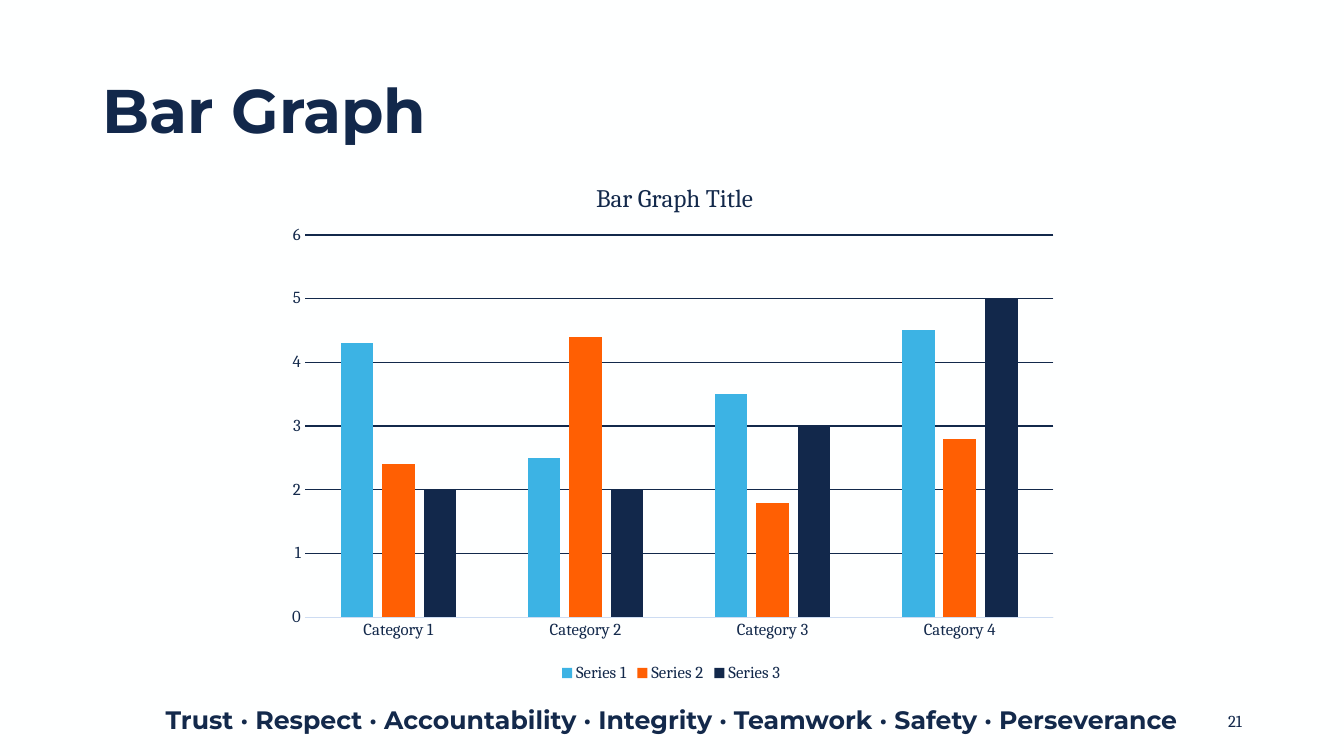
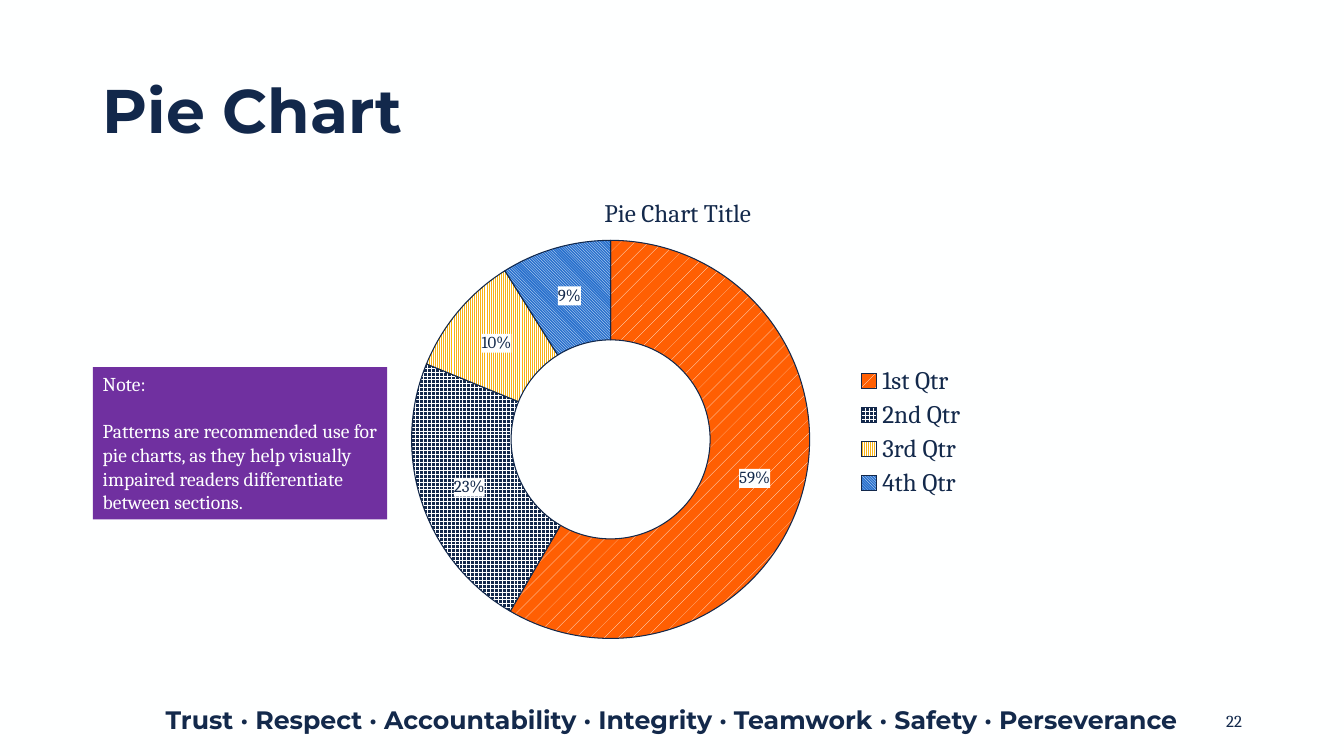
from dataclasses import dataclass
from typing import Any

from lxml.etree import SubElement
from pptx import Presentation
from pptx.chart.data import CategoryChartData as Data
from pptx.dml.color import RGBColor as Rgb
from pptx.enum.chart import XL_CHART_TYPE as Kind, XL_LEGEND_POSITION as Side, XL_TICK_MARK as Tick
from pptx.enum.dml import MSO_PATTERN as Pat
from pptx.enum.shapes import MSO_SHAPE as Shape
from pptx.enum.text import MSO_ANCHOR as Anchor, MSO_AUTO_SIZE as Auto, PP_ALIGN as Align
from pptx.oxml import parse_xml
from pptx.oxml.ns import nsdecls, qn
from pptx.util import Cm, Pt

NAVY = Rgb(0x12, 0x28, 0x4B)
INK = Rgb(0x13, 0x29, 0x4B)
WHITE = Rgb(0xFE, 0xFF, 0xFF)
SKY = Rgb(0x3C, 0xB3, 0xE4)
ORANGE = Rgb(0xFF, 0x5F, 0x03)
GOLD = Rgb(0xF8, 0xB3, 0x16)
BLUE = Rgb(0x28, 0x70, 0xCD)
PURPLE = Rgb(0x70, 0x30, 0xA0)
PALE = Rgb(0xCD, 0xDC, 0xF2)

HEAD = {"name": "Montserrat", "size": Pt(44), "bold": True}
MOTTO = {"name": "Montserrat", "size": Pt(18), "bold": True}
LARGE = {"name": "Cambria", "size": Pt(18), "bold": False}
NOTE = {"name": "Cambria", "size": Pt(14)}
SMALL = {"name": "Cambria", "size": Pt(12)}
BASE = {"name": "Cambria", "size": Pt(10)}
WORDS = "Trust · Respect · Accountability · Integrity · Teamwork · Safety · Perseverance"


@dataclass(frozen=True)
class Box:
    """Place and size in centimetres."""
    left: float
    top: float
    width: float
    height: float

    def cm(self) -> tuple[Cm, ...]:
        """Give the four lengths."""
        return Cm(self.left), Cm(self.top), Cm(self.width), Cm(self.height)


@dataclass(frozen=True)
class Row:
    """One chart series."""
    name: str
    vals: tuple[float, ...]
    tint: Rgb | None = None


@dataclass(frozen=True)
class Slice:
    """One patterned ring part."""
    name: str
    val: int
    weave: Any
    tint: Rgb


@dataclass(frozen=True)
class Plan:
    """Chart frame, heading and inner layout in fractions."""
    kind: Any
    box: Box
    title: str
    head: dict[str, float]
    plot: dict[str, float]
    side: Any
    key: dict[str, Any]


TITLE = Box(2.33, 1.02, 29.21, 3.68)
FOOT = Box(3.73, 17.63, 26.39, 1.02)
PAGE = Box(23.93, 17.65, 7.62, 1.02)
ASIDE = Box(2.34, 9.25, 7.42, 3.84)

ROWS = (
    Row("Series 1", (4.3, 2.5, 3.5, 4.5), SKY),
    Row("Series 2", (2.4, 4.4, 1.8, 2.8), ORANGE),
    Row("Series 3", (2, 2, 3, 5), NAVY),
)
SLICES = (
    Slice("1st Qtr", 59, Pat.PERCENT_5, ORANGE),
    Slice("2nd Qtr", 23, Pat.LARGE_GRID, NAVY),
    Slice("3rd Qtr", 10, Pat.LIGHT_VERTICAL, GOLD),
    Slice("4th Qtr", 9, Pat.LIGHT_DOWNWARD_DIAGONAL, BLUE),
)
BARS = Plan(Kind.COLUMN_CLUSTERED, Box(6.88, 3.91, 20.07, 13.39), "Bar Graph Title",
            {"x": 0.4, "y": 0.04}, {"x": 0.04, "y": 0.15, "w": 0.94, "h": 0.72},
            Side.BOTTOM, SMALL)
RING = Plan(Kind.DOUGHNUT, Box(7.82, 4.22, 18.24, 12.24), "Pie Chart Title",
            {"x": 0.4, "y": 0.05}, {"x": 0.14, "y": 0.15, "w": 0.55, "h": 0.82},
            Side.RIGHT, LARGE)
KEY = {"x": 0.75, "y": 0.4, "w": 0.16, "h": 0.29}


def style(item: Any, form: dict[str, Any]) -> None:
    """Set each attribute in a format."""
    for name, val in form.items():
        setattr(item, name, val)


def ink(font: Any, form: dict[str, Any], tint: Rgb = INK) -> None:
    """Format and colour a font."""
    style(font, form)
    font.color.rgb = tint


def place(part: Any, spots: dict[str, float], after: str = "") -> None:
    """Give a chart part a manual layout."""
    for old in part.findall(qn("c:layout")):
        part.remove(old)
    lay = parse_xml(f"<c:layout {nsdecls('c')}><c:manualLayout/></c:layout>")
    hand = lay[0]
    if not after:
        SubElement(hand, qn("c:layoutTarget")).set("val", "inner")
    for name in ("x", "y"):
        SubElement(hand, qn(f"c:{name}Mode")).set("val", "edge")
    for name, val in spots.items():
        SubElement(hand, qn(f"c:{name}")).set("val", str(val))
    if after:
        part.find(qn(after)).addnext(lay)
    else:
        part.insert(0, lay)


def label(slide: Any, box: Box, text: str, form: dict[str, Any], tint: Rgb,
          align: Any, anchor: Any) -> None:
    """Add one line of text."""
    frame = slide.shapes.add_textbox(*box.cm()).text_frame
    style(frame, {"word_wrap": True, "vertical_anchor": anchor, "text": text})
    line = frame.paragraphs[0]
    line.alignment = align
    ink(line.runs[0].font, form, tint)


def start(deck: Any, text: str, page: int) -> Any:
    """Add a slide with title, motto and page number."""
    slide = deck.slides.add_slide(deck.slide_layouts[5])
    title = slide.shapes.title
    spots = dict(zip(("left", "top", "width", "height"), TITLE.cm()))
    style(title, spots)
    style(title.text_frame, {"text": text, "word_wrap": True, "auto_size": Auto.NONE,
                             "vertical_anchor": Anchor.MIDDLE})
    line = title.text_frame.paragraphs[0]
    style(line, {"alignment": Align.LEFT, "line_spacing": 0.9})
    ink(line.runs[0].font, HEAD, NAVY)
    label(slide, PAGE, str(page), SMALL, NAVY, Align.RIGHT, Anchor.MIDDLE)
    label(slide, FOOT, WORDS, MOTTO, INK, Align.CENTER, Anchor.TOP)
    return slide


def graph(slide: Any, plan: Plan, cats: list[str], rows: tuple[Row, ...]) -> Any:
    """Add a chart with heading and legend."""
    data = Data()
    data.categories = cats
    for row in rows:
        data.add_series(row.name, row.vals)
    chart = slide.shapes.add_chart(plan.kind, *plan.box.cm(), data).chart
    ink(chart.font, BASE)
    style(chart, {"has_title": True, "has_legend": True})
    frame = chart.chart_title.text_frame
    frame.text = plan.title
    ink(frame.paragraphs[0].runs[0].font, LARGE)
    place(chart.element.find(".//" + qn("c:title")), plan.head, "c:tx")
    place(chart.element.find(".//" + qn("c:plotArea")), plan.plot)
    style(chart.legend, {"position": plan.side, "include_in_layout": False})
    ink(chart.legend.font, plan.key)
    return chart


def bars(deck: Any) -> None:
    """Build the column slide."""
    slide = start(deck, "Bar Graph", 21)
    chart = graph(slide, BARS, [f"Category {num}" for num in range(1, 5)], ROWS)
    plot = chart.plots[0]
    style(plot, {"gap_width": 219, "overlap": -27, "vary_by_categories": False})
    for bar, row in zip(plot.series, ROWS):
        bar.format.fill.solid()
        bar.format.fill.fore_color.rgb = row.tint
    for axis in (chart.category_axis, chart.value_axis):
        style(axis, {"major_tick_mark": Tick.NONE, "minor_tick_mark": Tick.NONE})
        ink(axis.tick_labels.font, SMALL)
    base = chart.category_axis.format.line
    base.color.rgb = PALE
    base.width = Pt(0.75)
    scale = chart.value_axis
    style(scale, {"minimum_scale": 0, "maximum_scale": 6, "major_unit": 1,
                  "has_major_gridlines": True})
    scale.format.line.fill.background()
    grid = scale.major_gridlines.format.line
    grid.color.rgb = INK
    grid.width = Pt(1)


def ring(deck: Any) -> None:
    """Build the doughnut slide."""
    slide = start(deck, "Pie Chart", 22)
    row = Row("Series 1", tuple(part.val for part in SLICES))
    chart = graph(slide, RING, [part.name for part in SLICES], (row,))
    place(chart.element.find(".//" + qn("c:legend")), KEY, "c:legendPos")
    plot = chart.plots[0]
    plot.vary_by_categories = True
    band = plot.series[0]
    for num, part in enumerate(SLICES):
        look = band.points[num].format
        look.fill.patterned()
        look.fill.pattern = part.weave
        look.fill.fore_color.rgb = WHITE
        look.fill.back_color.rgb = part.tint
        look.line.color.rgb = NAVY
        look.line.width = Pt(0.75)
    tags = band.data_labels
    style(tags, {"show_value": True, "number_format": '0"%"',
                 "number_format_is_linked": False})
    ink(tags.font, SMALL)
    back = parse_xml(f'<c:spPr {nsdecls("c", "a")}><a:solidFill>'
                     f'<a:srgbClr val="{WHITE}"/></a:solidFill></c:spPr>')
    tags._element.find(qn("c:numFmt")).addnext(back)
    aside(slide)


def aside(slide: Any) -> None:
    """Add the note on patterns."""
    card = slide.shapes.add_shape(Shape.RECTANGLE, *ASIDE.cm())
    card.shadow.inherit = False
    card.fill.solid()
    card.fill.fore_color.rgb = PURPLE
    card.line.fill.background()
    frame = card.text_frame
    style(frame, {"word_wrap": True, "vertical_anchor": Anchor.TOP})
    frame.text = ("Note:\nPatterns are recommended use for pie charts, as they help "
                  "visually impaired readers differentiate between sections.")
    for line in frame.paragraphs:
        line.alignment = Align.LEFT
        ink(line.runs[0].font, NOTE, WHITE)
    frame.paragraphs[1].space_before = Pt(17)


def main() -> None:
    """Build and save the deck."""
    deck = Presentation()
    style(deck, {"slide_width": Cm(33.87), "slide_height": Cm(19.05)})
    fill = deck.slide_master.background.fill
    fill.solid()
    fill.fore_color.rgb = WHITE
    bars(deck)
    ring(deck)
    deck.save("out.pptx")


if __name__ == "__main__":
    main()
